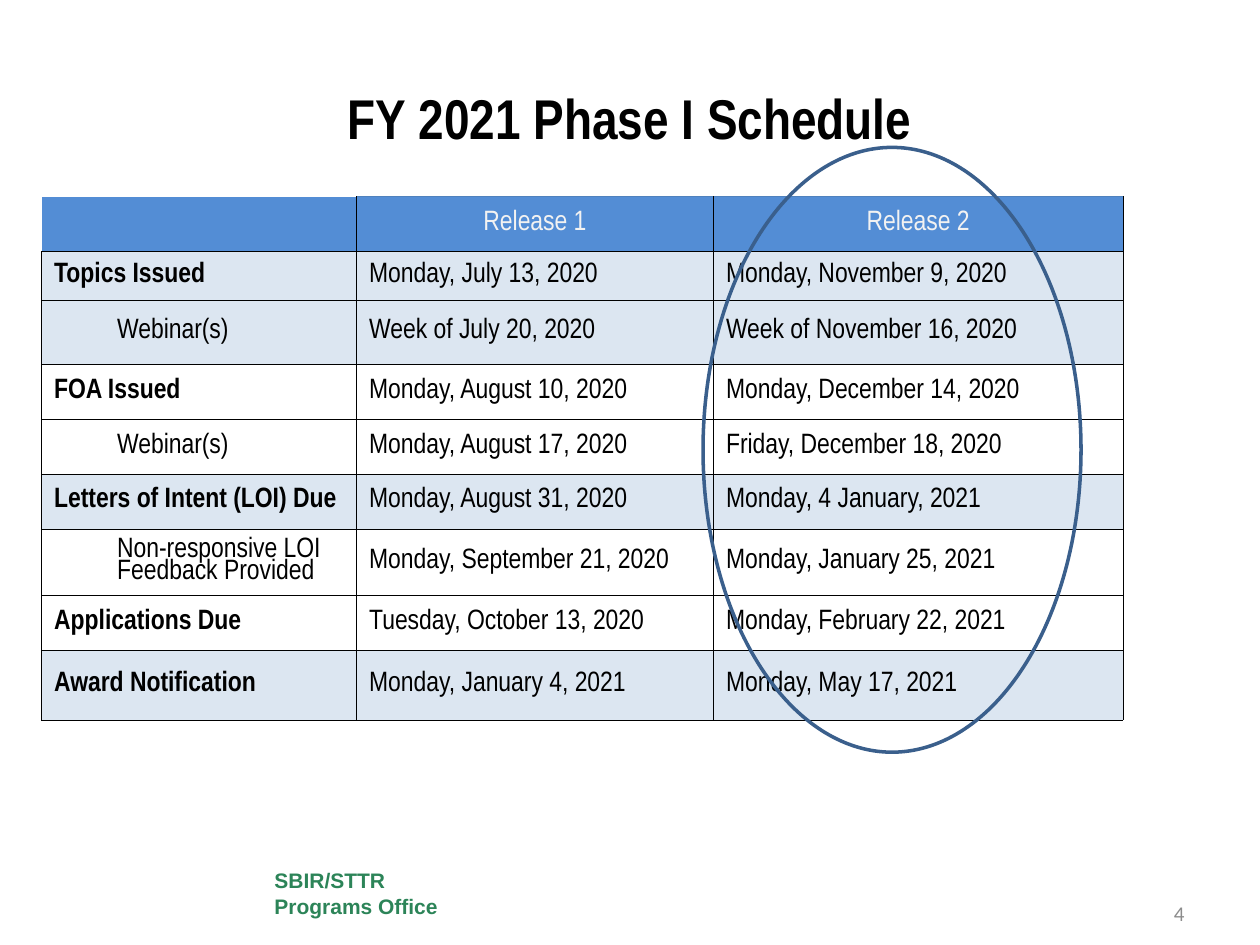
"""Build the FY 2021 Phase I schedule slide."""
from dataclasses import dataclass
from typing import Optional

from lxml.etree import SubElement
from pptx import Presentation
from pptx.dml.color import RGBColor
from pptx.enum.shapes import MSO_SHAPE
from pptx.enum.text import MSO_ANCHOR, PP_ALIGN
from pptx.oxml.ns import qn
from pptx.util import Inches, Pt

WIDTH, HEIGHT = Inches(10), Inches(7.5)
COLUMNS = (0.25, 0.2833, 0.325)
BLACK, WHITE, BLUE, PALE = "000000", "FFFFFF", "538DD5", "DCE6F1"
NARROW = "Arial Narrow"


@dataclass(frozen=True)
class Box:
    """Place and size as shares of the slide."""
    left: float
    top: float
    width: float
    height: float

    def emu(self) -> tuple[int, int, int, int]:
        return (int(self.left * WIDTH), int(self.top * HEIGHT),
                int(self.width * WIDTH), int(self.height * HEIGHT))


@dataclass(frozen=True)
class Style:
    """Look of one paragraph."""
    size: float
    font: str
    color: str
    bold: bool = False
    align: PP_ALIGN = PP_ALIGN.LEFT
    spacing: Optional[float] = None


@dataclass(frozen=True)
class Milestone:
    """One schedule row; its height is a share of the slide."""
    label: str
    first: str
    second: str
    height: float
    shaded: bool = False
    sub: bool = False


MILESTONES = (
    Milestone("Topics Issued", "Monday, July 13, 2020", "Monday, November 9, 2020", 0.052, shaded=True),
    Milestone("Webinar(s)", "Week of July 20, 2020", "Week of November 16, 2020", 0.068, shaded=True, sub=True),
    Milestone("FOA Issued", "Monday, August 10, 2020", "Monday, December 14, 2020", 0.058),
    Milestone("Webinar(s)", "Monday, August 17, 2020", "Friday, December 18, 2020", 0.058, sub=True),
    Milestone("Letters of Intent (LOI) Due", "Monday, August 31, 2020", "Monday, 4 January, 2021", 0.058, shaded=True),
    Milestone("Non-responsive LOI Feedback Provided", "Monday, September 21, 2020",
              "Monday, January 25, 2021", 0.069, sub=True),
    Milestone("Applications Due", "Tuesday, October 13, 2020", "Monday, February 22, 2021", 0.058),
    Milestone("Award Notification", "Monday, January 4, 2021", "Monday, May 17, 2021", 0.074, shaded=True),
)
HEADER_HEIGHT = 0.058
TITLE = Style(32, NARROW, BLACK, bold=True, align=PP_ALIGN.CENTER)
HEADER = Style(16, NARROW, "F2F2F2", align=PP_ALIGN.CENTER, spacing=0.8)
BODY = Style(16, NARROW, BLACK, spacing=0.8)
STRONG = Style(16, NARROW, BLACK, bold=True, spacing=0.8)
OFFICE = Style(12, "Arial", "2C8458", bold=True)
NUMBER = Style(12, "Calibri", "8C8C8C", align=PP_ALIGN.RIGHT)


def rgb(value: str) -> RGBColor:
    return RGBColor.from_string(value)


def write(tf, text: str, style: Style) -> None:
    tf.word_wrap = True
    p = tf.paragraphs[0]
    p.text = text
    p.alignment = style.align
    p.line_spacing = style.spacing
    p.font.size, p.font.name, p.font.bold = Pt(style.size), style.font, style.bold
    p.font.color.rgb = rgb(style.color)


def set_borders(cell, edges: dict[str, str]) -> None:
    pr = cell._tc.get_or_add_tcPr()
    for i, (edge, color) in enumerate(edges.items()):
        ln = SubElement(pr, qn(f"a:ln{edge}"), w=str(Pt(0.5)))
        SubElement(SubElement(ln, qn("a:solidFill")), qn("a:srgbClr"), val=color)
        pr.insert(i, ln)


def fill_cell(cell, text: str, style: Style, fill: Optional[str], edges: dict[str, str]) -> None:
    cell.vertical_anchor = MSO_ANCHOR.MIDDLE
    write(cell.text_frame, text, style)
    if fill:
        cell.fill.solid()
        cell.fill.fore_color.rgb = rgb(fill)
    else:
        cell.fill.background()
    set_borders(cell, edges)


def add_schedule(s, left: float, top: float) -> None:
    heights = (HEADER_HEIGHT, *(m.height for m in MILESTONES))
    box = Box(left, top, sum(COLUMNS), sum(heights))
    table = s.shapes.add_table(len(heights), len(COLUMNS), *box.emu()).table
    table.horz_banding = False
    for column, share in zip(table.columns, COLUMNS):
        column.width = int(share * WIDTH)
    for row, share in zip(table.rows, heights):
        row.height = int(share * HEIGHT)
    for c, text in enumerate(("", "Release 1", "Release 2")):
        edges = {"L": BLACK, "R": BLACK, "T": "4F81BD", "B": BLACK} if c else {"R": BLACK, "B": BLACK}
        fill_cell(table.cell(0, c), text, HEADER, BLUE, edges)
    for r, m in enumerate(MILESTONES, start=1):
        for c, text in enumerate((m.label, m.first, m.second)):
            style = STRONG if c == 0 and not m.sub else BODY
            fill_cell(table.cell(r, c), text, style, PALE if m.shaded else None, dict.fromkeys("LRTB", BLACK))
        if m.sub:
            pr = table.cell(r, 0).text_frame.paragraphs[0]._p.get_or_add_pPr()
            pr.set("marL", str(Inches(0.5)))
            pr.set("lvl", "1")


def add_office(s, box: Box) -> None:
    sp = s.shapes.add_shape(MSO_SHAPE.RECTANGLE, *box.emu())
    sp.shadow.inherit = False
    sp.fill.solid()
    sp.fill.fore_color.rgb = rgb(WHITE)
    sp.line.fill.background()
    sp.text_frame.vertical_anchor = MSO_ANCHOR.MIDDLE
    write(sp.text_frame, "SBIR/STTR Programs Office", OFFICE)


def add_title(s, box: Box) -> None:
    sp = s.shapes.title
    sp.left, sp.top, sp.width, sp.height = box.emu()
    sp.text_frame.vertical_anchor = MSO_ANCHOR.MIDDLE
    write(sp.text_frame, "FY 2021 Phase I Schedule", TITLE)


def add_number(s, box: Box) -> None:
    tf = s.shapes.add_textbox(*box.emu()).text_frame
    tf.vertical_anchor = MSO_ANCHOR.BOTTOM
    tf.margin_bottom = 0
    write(tf, "4", NUMBER)


def add_highlight(s, box: Box) -> None:
    sp = s.shapes.add_shape(MSO_SHAPE.FLOWCHART_CONNECTOR, *box.emu())
    sp.shadow.inherit = False
    sp.fill.background()
    sp.line.color.rgb = rgb("3A5F8C")
    sp.line.width = Pt(2)


def main() -> None:
    prs = Presentation()
    prs.slide_width, prs.slide_height = WIDTH, HEIGHT
    s = prs.slides.add_slide(prs.slide_layouts[5])
    add_office(s, Box(0.208, 0.913, 0.158, 0.064))
    add_title(s, Box(0.05, 0.04, 0.9, 0.167))
    add_number(s, Box(0.717, 0.927, 0.233, 0.053))
    add_schedule(s, 0.033, 0.208)
    add_highlight(s, Box(0.558, 0.156, 0.3, 0.64))
    prs.save("out.pptx")


if __name__ == "__main__":
    main()
